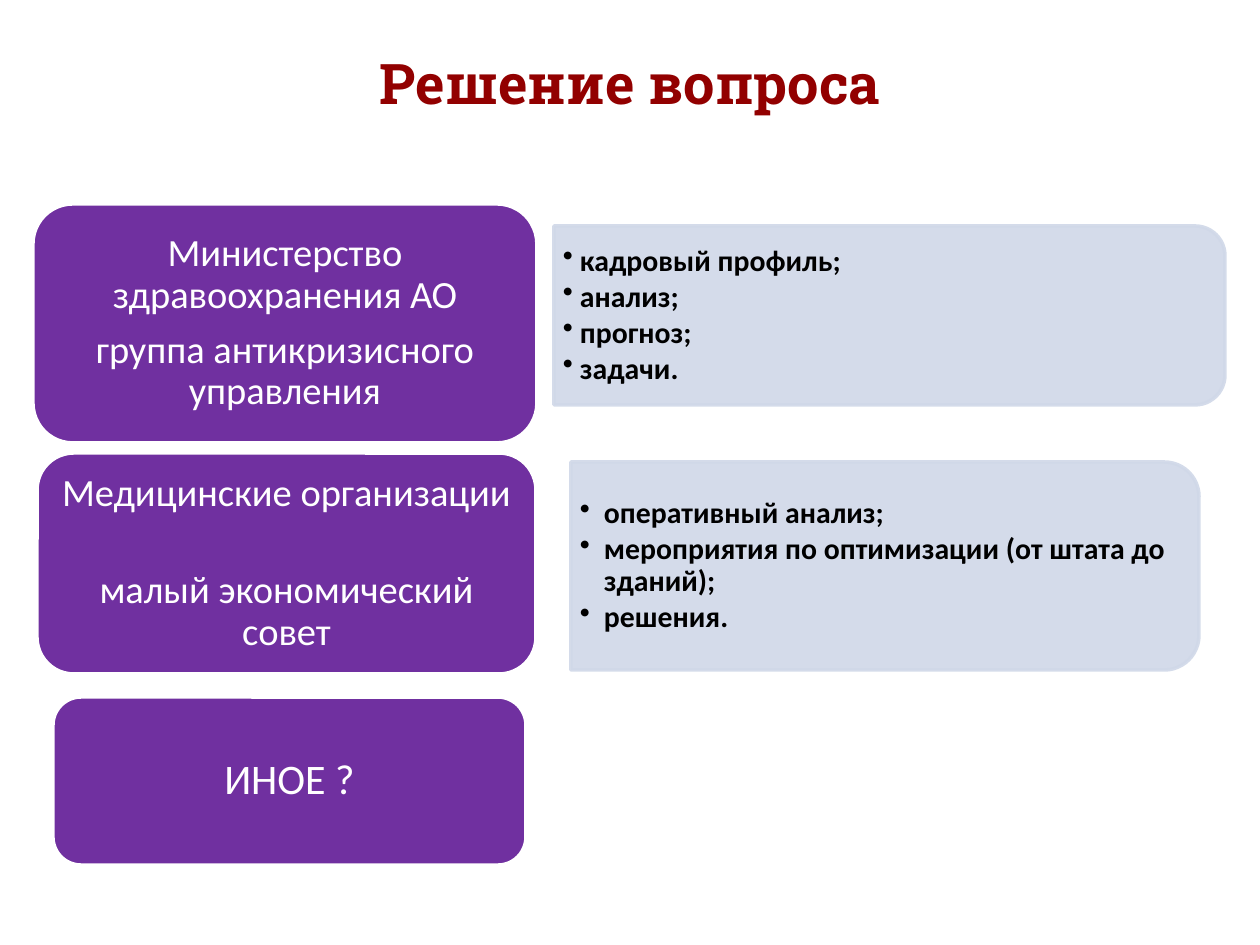
"""Build the slide on who resolves the question and by which steps."""
from dataclasses import dataclass

from lxml import etree
from pptx import Presentation
from pptx.dml.color import RGBColor
from pptx.enum.shapes import MSO_SHAPE
from pptx.enum.text import MSO_ANCHOR, PP_ALIGN
from pptx.oxml.ns import qn
from pptx.util import Emu, Pt

CARD_SHAPE = MSO_SHAPE.ROUNDED_RECTANGLE
PANEL_SHAPE = MSO_SHAPE.ROUND_2_SAME_RECTANGLE
MIDDLE = MSO_ANCHOR.MIDDLE
CENTER, LEFT = PP_ALIGN.CENTER, PP_ALIGN.LEFT


@dataclass(frozen=True)
class Theme:
    title: RGBColor = RGBColor(0x92, 0x00, 0x00)
    card: RGBColor = RGBColor(0x70, 0x30, 0xA0)
    panel: RGBColor = RGBColor(0xD0, 0xD8, 0xE8)
    white: RGBColor = RGBColor(0xFF, 0xFF, 0xFF)
    black: RGBColor = RGBColor(0x00, 0x00, 0x00)
    title_font: str = "Roboto Slab"
    body_font: str = "Calibri"
    title_size: int = 32
    card_size: int = 22
    other_size: int = 24
    panel_size: int = 17
    line_width: int = 2
    panel_alpha: int = 90000


def px(length):
    return Emu(round(length * 914400 / 126))


def write(frame, lines, *, size, color, font=Theme.body_font, bold=False,
          align=CENTER, spacing=0.9, gap=0, indent=0, inset=(11, 6)):
    frame.word_wrap = True
    frame.vertical_anchor = MIDDLE
    frame.margin_left = frame.margin_right = px(inset[0])
    frame.margin_top = frame.margin_bottom = px(inset[1])
    for index, line in enumerate(lines):
        para = frame.paragraphs[0] if index == 0 else frame.add_paragraph()
        para.alignment = align
        para.line_spacing = spacing
        para.space_before = Pt(0)
        para.space_after = Pt(gap if index < len(lines) - 1 else 0)
        if indent:
            properties = para._p.get_or_add_pPr()
            properties.set("marL", str(px(indent)))
            properties.set("indent", str(-px(indent)))
            etree.SubElement(properties, qn("a:buChar"), char="•")
        span = para.add_run()
        span.text = line
        span.font.name = font
        span.font.size = Pt(size)
        span.font.bold = bold
        span.font.color.rgb = color


theme = Theme()
deck = Presentation()
deck.slide_width, deck.slide_height = px(1260), px(945)
page = deck.slides.add_slide(deck.slide_layouts[5])

title = page.shapes.title
title.left, title.top, title.width, title.height = px(0), px(0), px(1260), px(164)
write(title.text_frame, ["Решение вопроса"], size=theme.title_size,
      color=theme.title, font=theme.title_font, bold=True, spacing=1)

panels = [
    ((554, 226, 671, 179), 17,
     ["кадровый профиль;", "анализ;", "прогноз;", "задачи."]),
    ((571, 462, 628, 208), 24,
     ["оперативный анализ;",
      "мероприятия по оптимизации (от штата до зданий);",
      "решения."]),
]
for (left, top, width, height), indent, lines in panels:
    turn = (width - height) / 2
    panel = page.shapes.add_shape(PANEL_SHAPE, px(left + turn), px(top - turn),
                                  px(height), px(width))
    panel.rotation = 90
    panel.shadow.inherit = False
    panel.fill.solid()
    panel.fill.fore_color.rgb = theme.panel
    panel.line.color.rgb = theme.panel
    panel.line.width = Pt(theme.line_width)
    for color in panel._element.spPr.iter(qn("a:srgbClr")):
        etree.SubElement(color, qn("a:alpha"), val=str(theme.panel_alpha))
    box = page.shapes.add_textbox(px(left), px(top), px(width - 9), px(height))
    write(box.text_frame, lines, size=theme.panel_size, color=theme.black,
          bold=True, align=LEFT, gap=2.2, indent=indent, inset=(9, 5))

cards = [
    ((33, 204, 504, 239), theme.card_size, 7.7,
     ["Министерство здравоохранения АО", "группа антикризисного управления"]),
    ((37, 453, 499, 221), theme.card_size, 31.5,
     ["Медицинские организации", "малый экономический совет"]),
    ((53, 697, 473, 168), theme.other_size, 0, ["ИНОЕ ?"]),
]
for bounds, size, gap, lines in cards:
    card = page.shapes.add_shape(CARD_SHAPE, *map(px, bounds))
    card.shadow.inherit = False
    card.fill.solid()
    card.fill.fore_color.rgb = theme.card
    card.line.color.rgb = theme.white
    card.line.width = Pt(theme.line_width)
    write(card.text_frame, lines, size=size, color=theme.white, gap=gap)

deck.save("out.pptx")
